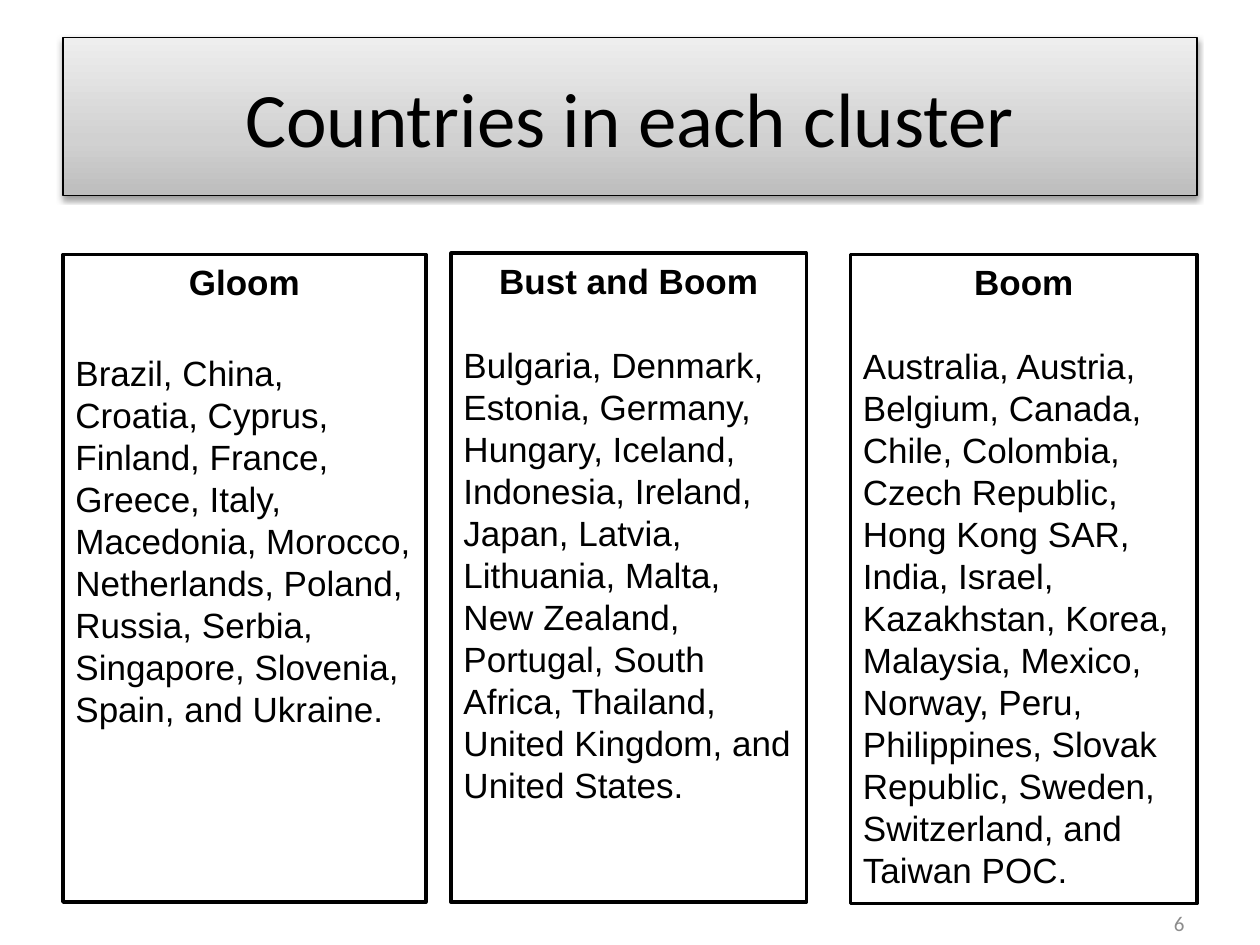
"""Build the slide that lists the countries in each cluster."""
from pptx import Presentation
from pptx.dml.color import RGBColor
from pptx.enum.shapes import MSO_SHAPE
from pptx.enum.text import MSO_ANCHOR, PP_ALIGN
from pptx.oxml import parse_xml
from pptx.util import Inches, Pt

NS = 'xmlns:a="http://schemas.openxmlformats.org/drawingml/2006/main"'


def rgb(value):
    return RGBColor.from_string(value)


def write(p, text, align, color="000000", **font):
    p.alignment = align
    r = p.add_run()
    r.text = text
    r.font.color.rgb = rgb(color)
    for name, value in font.items():
        setattr(r.font, name, value)


prs = Presentation()
prs.slide_width, prs.slide_height = Inches(10), Inches(7.5)
s = prs.slides.add_slide(prs.slide_layouts[5])

title = s.shapes.title
place = {"left": 0.5, "top": 0.3, "width": 9, "height": 1.25}
for name, value in place.items():
    setattr(title, name, Inches(value))
stops = "".join(
    f'<a:gs pos="{pos * 1000}"><a:srgbClr val="{color}"/></a:gs>'
    for pos, color in [(0, "BDBDBD"), (35, "D1D1D1"), (100, "EEEEEE")]
)
spPr = title.element.spPr
spPr.append(parse_xml(
    f'<a:gradFill {NS} rotWithShape="1"><a:gsLst>{stops}</a:gsLst>'
    '<a:lin ang="16200000" scaled="0"/></a:gradFill>'
))
title.line.color.rgb = rgb("000000")
title.line.width = Pt(0.75)
spPr.append(parse_xml(
    f'<a:effectLst {NS}><a:outerShdw blurRad="{Pt(3.1)}" dist="{Pt(1.6)}" '
    'dir="5400000" rotWithShape="0"><a:srgbClr val="000000">'
    '<a:alpha val="38000"/></a:srgbClr></a:outerShdw></a:effectLst>'
))
title.text_frame.vertical_anchor = MSO_ANCHOR.MIDDLE
write(title.text_frame.paragraphs[0], "Countries in each cluster",
      PP_ALIGN.CENTER, size=Pt(44), name="Calibri")

clusters = [
    ("Gloom", 0.5, 2.02, 2.88, 5.14, 28,
     "Brazil, China, Croatia, Cyprus, Finland, France, Greece, Italy, "
     "Macedonia, Morocco, Netherlands, Poland, Russia, Serbia, Singapore, "
     "Slovenia, Spain, and Ukraine."),
    ("Bust and Boom", 3.58, 2.01, 2.82, 5.15, 24,
     "Bulgaria, Denmark, Estonia, Germany, Hungary, Iceland, Indonesia, "
     "Ireland, Japan, Latvia, Lithuania, Malta, New Zealand, Portugal, "
     "South Africa, Thailand, United Kingdom, and United States."),
    ("Boom", 6.75, 2.02, 2.75, 5.15, 24,
     "Australia, Austria, Belgium, Canada, Chile, Colombia, Czech Republic, "
     "Hong Kong SAR, India, Israel, Kazakhstan, Korea, Malaysia, Mexico, "
     "Norway, Peru, Philippines, Slovak Republic, Sweden, Switzerland, and "
     "Taiwan POC."),
]
for heading, left, top, width, height, gap, countries in clusters:
    sp = s.shapes.add_shape(MSO_SHAPE.RECTANGLE, Inches(left), Inches(top),
                            Inches(width), Inches(height))
    sp.shadow.inherit = False
    sp.fill.solid()
    sp.fill.fore_color.rgb = rgb("FFFFFF")
    sp.line.color.rgb = rgb("000000")
    sp.line.width = Pt(2)
    tf = sp.text_frame
    tf.word_wrap = True
    tf.vertical_anchor = MSO_ANCHOR.TOP
    p = tf.paragraphs[0]
    p.space_after = Pt(gap)
    write(p, heading, PP_ALIGN.CENTER, size=Pt(20), name="Arial", bold=True)
    write(tf.add_paragraph(), countries, PP_ALIGN.LEFT, size=Pt(20),
          name="Arial", bold=False)

number = s.shapes.add_textbox(Inches(7.17), Inches(7.16), Inches(2.33), Inches(0.34))
tf = number.text_frame
tf.word_wrap = True
tf.vertical_anchor = MSO_ANCHOR.MIDDLE
write(tf.paragraphs[0], "6", PP_ALIGN.RIGHT, "8C8C8C", size=Pt(12), name="Calibri")

prs.save("out.pptx")
